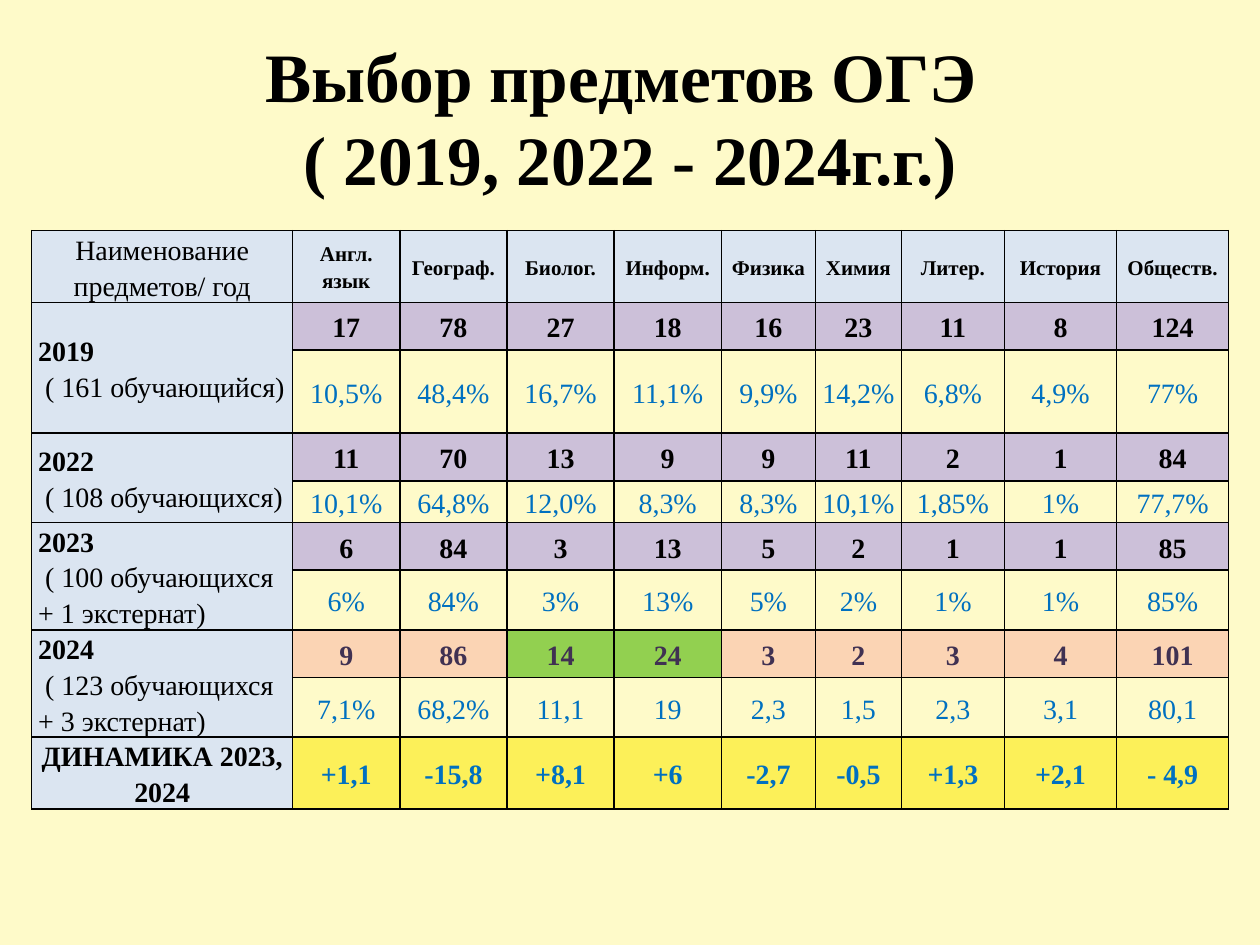
from lxml import etree
from pptx import Presentation
from pptx.dml.color import RGBColor
from pptx.enum.text import MSO_ANCHOR, MSO_AUTO_SIZE, PP_ALIGN
from pptx.oxml.ns import qn
from pptx.util import Cm, Pt

CENTER, LEFT = PP_ALIGN.CENTER, PP_ALIGN.LEFT
MIDDLE = MSO_ANCHOR.MIDDLE
NO_AUTOFIT = MSO_AUTO_SIZE.NONE
FONT = "Times New Roman"
CREAM = RGBColor(0xFE, 0xFA, 0xC9)
BLACK = RGBColor(0x00, 0x00, 0x00)
BLUE = RGBColor(0x00, 0x70, 0xC0)
PLUM = RGBColor(0x40, 0x31, 0x52)
PALE_BLUE = RGBColor(0xDB, 0xE5, 0xF1)
LILAC = RGBColor(0xCC, 0xC0, 0xD9)
PEACH = RGBColor(0xFB, 0xD4, 0xB4)
GREEN = RGBColor(0x92, 0xD0, 0x50)
YELLOW = RGBColor(0xFC, 0xF0, 0x59)

SUBJECTS = ["Англ. язык", "Географ.", "Биолог.", "Информ.", "Физика",
            "Химия", "Литер.", "История", "Обществ."]
YEARS = [
    ("2019", " ( 161 обучающийся)",
     "17 78 27 18 16 23 11 8 124",
     "10,5% 48,4% 16,7% 11,1% 9,9% 14,2% 6,8% 4,9% 77%"),
    ("2022", " ( 108 обучающихся)",
     "11 70 13 9 9 11 2 1 84",
     "10,1% 64,8% 12,0% 8,3% 8,3% 10,1% 1,85% 1% 77,7%"),
    ("2023", " ( 100 обучающихся + 1 экстернат)",
     "6 84 3 13 5 2 1 1 85",
     "6% 84% 3% 13% 5% 2% 1% 1% 85%"),
    ("2024", " ( 123 обучающихся + 3 экстернат)",
     "9 86 14 24 3 2 3 4 101",
     "7,1% 68,2% 11,1 19 2,3 1,5 2,3 3,1 80,1"),
]
DYNAMICS = ["+1,1", "-15,8", "+8,1", "+6", "-2,7", "-0,5", "+1,3", "+2,1", "- 4,9"]
GROWN = ["14", "24"]
COL_WIDTHS = [5.26, 2.16, 2.16, 2.16, 2.16, 1.9, 1.73, 2.08, 2.26, 2.26]
ROW_HEIGHTS = [1.14, 0.96, 1.68, 0.96, 0.84, 0.96, 1.2, 0.96, 1.2, 1.14]


def write_cell(cell, text, fill=None, color=BLACK, size=16, bold=False, align=CENTER):
    cell.text = text
    cell.vertical_anchor = MIDDLE
    cell.margin_left = cell.margin_right = Cm(0.13)
    cell.margin_top = cell.margin_bottom = 0
    for p in cell.text_frame.paragraphs:
        p.alignment = align
        p.line_spacing = 1.15
        p.font.name = FONT
        p.font.size = Pt(size)
        p.font.bold = bold
        p.font.color.rgb = color
    if fill is None:
        cell.fill.background()
    else:
        cell.fill.solid()
        cell.fill.fore_color.rgb = fill


def add_borders(cell):
    tc_pr = cell._tc.get_or_add_tcPr()
    for side in ("a:lnL", "a:lnR", "a:lnT", "a:lnB"):
        ln = etree.SubElement(tc_pr, qn(side), w=str(Pt(1)))
        solid = etree.SubElement(ln, qn("a:solidFill"))
        etree.SubElement(solid, qn("a:srgbClr"), val=str(BLACK))


prs = Presentation()
prs.slide_width, prs.slide_height = Cm(25.4), Cm(19.05)
s = prs.slides.add_slide(prs.slide_layouts[5])
s.background.fill.solid()
s.background.fill.fore_color.rgb = CREAM

title = s.shapes.title
title.left, title.top, title.width, title.height = Cm(1.27), Cm(0.76), Cm(22.86), Cm(3.18)
tf = title.text_frame
tf.text = "Выбор предметов ОГЭ \v( 2019, 2022 - 2024г.г.)"
tf.auto_size = NO_AUTOFIT
tf.vertical_anchor = MIDDLE
p = tf.paragraphs[0]
p.alignment = CENTER
p.font.name = FONT
p.font.size = Pt(39.6)
p.font.bold = True
p.font.color.rgb = BLACK

frame = s.shapes.add_table(len(ROW_HEIGHTS), len(COL_WIDTHS), Cm(0.64), Cm(4.65),
                           Cm(sum(COL_WIDTHS)), Cm(sum(ROW_HEIGHTS)))
table = frame.table
for column, width in zip(table.columns, COL_WIDTHS):
    column.width = Cm(width)
for row, height in zip(table.rows, ROW_HEIGHTS):
    row.height = Cm(height)
for cell in table.iter_cells():
    add_borders(cell)

write_cell(table.cell(0, 0), "Наименование предметов/ год", PALE_BLUE)
for col, subject in enumerate(SUBJECTS, 1):
    write_cell(table.cell(0, col), subject, PALE_BLUE, size=12, bold=True)

for i, (year, pupils, counts, shares) in enumerate(YEARS):
    top = 1 + 2 * i
    label = table.cell(top, 0)
    label.merge(table.cell(top + 1, 0))
    write_cell(label, f"{year}\n{pupils}", PALE_BLUE, align=LEFT)
    label.text_frame.paragraphs[0].font.bold = True
    latest = year == "2024"
    for col, (count, share) in enumerate(zip(counts.split(), shares.split()), 1):
        fill = LILAC
        if latest:
            fill = GREEN if count in GROWN else PEACH
        write_cell(table.cell(top, col), count, fill, PLUM if latest else BLACK, bold=True)
        write_cell(table.cell(top + 1, col), share, color=BLUE)

last = len(ROW_HEIGHTS) - 1
write_cell(table.cell(last, 0), "ДИНАМИКА 2023, 2024", PALE_BLUE, bold=True)
for col, change in enumerate(DYNAMICS, 1):
    write_cell(table.cell(last, col), change, YELLOW, BLUE, bold=True)

prs.save("out.pptx")
